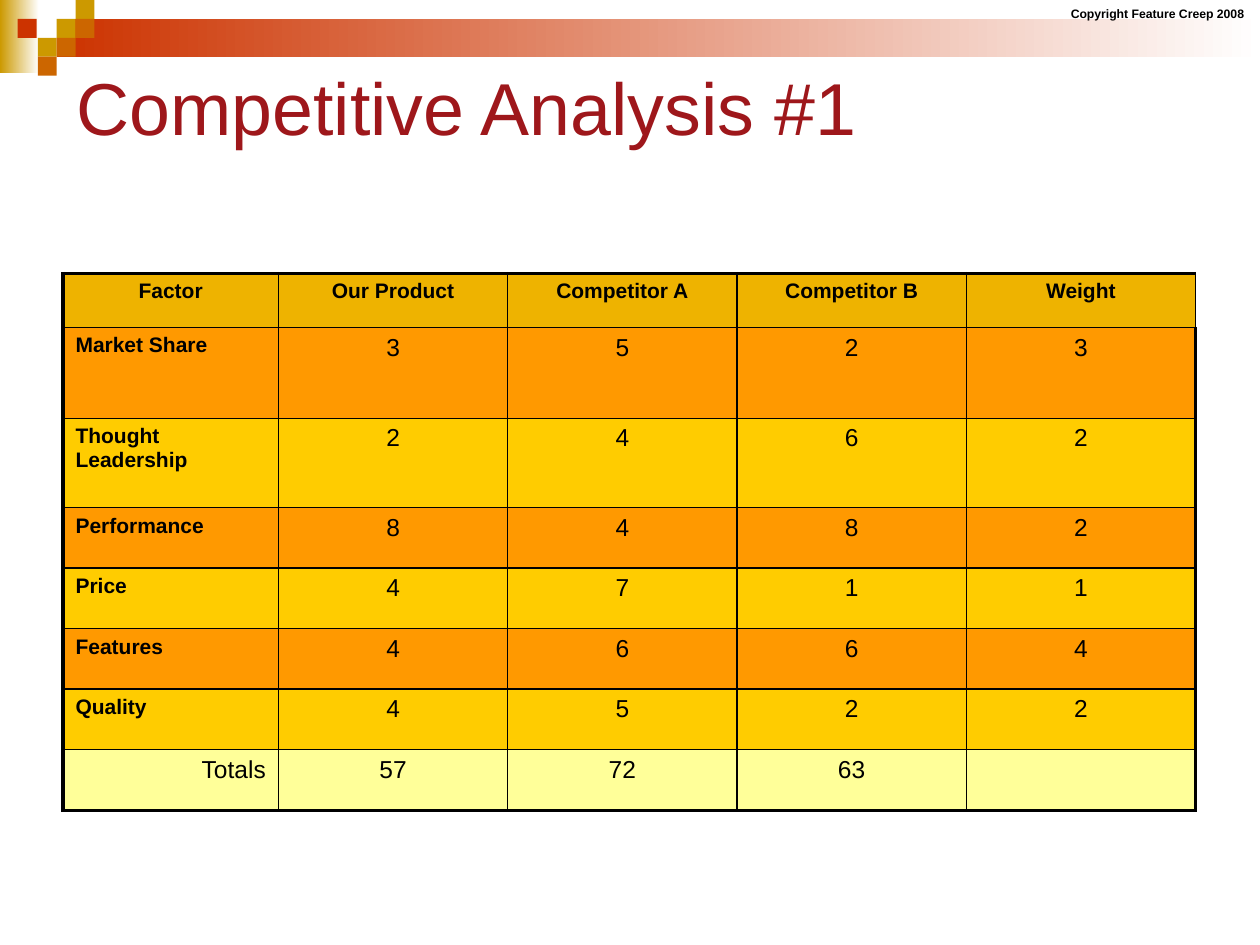
"""Build the competitive analysis slide with its scored comparison table."""
from lxml import etree
from pptx import Presentation
from pptx.dml.color import RGBColor
from pptx.enum import shapes, text
from pptx.oxml import ns
from pptx.util import Inches, Pt

FONT = "Arial"
BLACK = RGBColor(0x00, 0x00, 0x00)
WHITE = RGBColor(0xFF, 0xFF, 0xFF)
CRIMSON = RGBColor(0x9E, 0x17, 0x1B)
GOLD = RGBColor(0xCC, 0x99, 0x00)
RED = RGBColor(0xCC, 0x33, 0x00)
BROWN = RGBColor(0xCC, 0x66, 0x00)
HEADER_FILL = RGBColor(0xEE, 0xB3, 0x00)
ORANGE = RGBColor(0xFF, 0x99, 0x00)
YELLOW = RGBColor(0xFF, 0xCC, 0x00)
TOTAL_FILL = RGBColor(0xFF, 0xFF, 0x99)

TILE = 0.15
TILES = [
    (0.45, 0.15, GOLD), (0.6, 0, GOLD), (0.6, 0.15, BROWN), (0.3, 0.3, GOLD),
    (0.14, 0.15, RED), (0.45, 0.3, BROWN), (0.3, 0.45, BROWN),
]
SCORES = [
    ("Factor", "Our Product", "Competitor A", "Competitor B", "Weight"),
    ("Market Share", "3", "5", "2", "3"),
    ("Thought Leadership", "2", "4", "6", "2"),
    ("Performance", "8", "4", "8", "2"),
    ("Price", "4", "7", "1", "1"),
    ("Features", "4", "6", "6", "4"),
    ("Quality", "4", "5", "2", "2"),
    ("Totals", "57", "72", "63", ""),
]
COLUMN_WIDTHS = [1.71] + [1.82] * 4
ROW_HEIGHTS = [0.43, 0.72, 0.71] + [0.48] * 5


def add_block(slide, left, top, width, height, color, fade=False):
    """Add a borderless rectangle, solid or fading to white on the right."""
    block = slide.shapes.add_shape(
        shapes.MSO_SHAPE.RECTANGLE,
        Inches(left), Inches(top), Inches(width), Inches(height))
    block.shadow.inherit = False
    block.line.fill.background()
    if fade:
        block.fill.gradient()
        block.fill.gradient_angle = 0
        for stop, shade in zip(block.fill.gradient_stops, (color, WHITE)):
            stop.color.rgb = shade
    else:
        block.fill.solid()
        block.fill.fore_color.rgb = color


def write(paragraph, wording, size, color=BLACK, bold=False):
    """Add one styled run to a paragraph."""
    run = paragraph.add_run()
    run.text = wording
    run.font.name = FONT
    run.font.size = Pt(size)
    run.font.bold = bold
    run.font.color.rgb = color


def add_label(slide, left, top, width, height, wording, size, wrap=True, **style):
    """Add a vertically centred text box holding one line."""
    box = slide.shapes.add_textbox(
        Inches(left), Inches(top), Inches(width), Inches(height))
    box.text_frame.word_wrap = wrap
    box.text_frame.vertical_anchor = text.MSO_ANCHOR.MIDDLE
    write(box.text_frame.paragraphs[0], wording, size, **style)


def set_border(cell, side, points):
    """Draw a black line on one side (L, R, T or B) of a cell."""
    edge = etree.SubElement(
        cell._tc.get_or_add_tcPr(), ns.qn(f"a:ln{side}"), w=str(Pt(points)))
    fill = etree.SubElement(edge, ns.qn("a:solidFill"))
    etree.SubElement(fill, ns.qn("a:srgbClr"), val=str(BLACK))


def style_cell(cell, row, column, wording):
    """Give a cell its borders, fill and text according to its position."""
    header, total = row == 0, row == len(SCORES) - 1
    last_column = column == len(COLUMN_WIDTHS) - 1
    thick = {"L": column == 0, "R": last_column and not header,
             "T": header, "B": total}
    for side, is_thick in thick.items():
        set_border(cell, side, 2 if is_thick else 1)

    cell.fill.solid()
    if header:
        cell.fill.fore_color.rgb = HEADER_FILL
    elif total:
        cell.fill.fore_color.rgb = TOTAL_FILL
    else:
        cell.fill.fore_color.rgb = ORANGE if row % 2 else YELLOW

    paragraph = cell.text_frame.paragraphs[0]
    if header or column:
        paragraph.alignment = text.PP_ALIGN.CENTER
    else:
        paragraph.alignment = text.PP_ALIGN.RIGHT if total else text.PP_ALIGN.LEFT
    heading = header or (column == 0 and not total)
    if wording:
        write(paragraph, wording, 12 if heading else 14, bold=heading)


def add_score_table(slide):
    """Add the table of factors, scores, weights and totals."""
    table = slide.shapes.add_table(
        len(SCORES), len(COLUMN_WIDTHS), Inches(0.5), Inches(2.17),
        Inches(sum(COLUMN_WIDTHS)), Inches(sum(ROW_HEIGHTS))).table
    table.first_row = table.horz_banding = False
    for column, width in zip(table.columns, COLUMN_WIDTHS):
        column.width = Inches(width)
    for row, height in zip(table.rows, ROW_HEIGHTS):
        row.height = Inches(height)
    for row, factor in enumerate(SCORES):
        for column, wording in enumerate(factor):
            style_cell(table.cell(row, column), row, column, wording)


def main():
    """Assemble and save the slide."""
    deck = Presentation()
    deck.slide_width, deck.slide_height = Inches(10), Inches(7.5)
    slide = deck.slides.add_slide(deck.slide_layouts[6])
    add_block(slide, 0, 0, 0.31, 0.58, GOLD, fade=True)
    add_block(slide, 0.45, 0.15, 9.55, 0.3, RED, fade=True)
    for left, top, color in TILES:
        add_block(slide, left, top, TILE, TILE, color)
    add_label(slide, 8.4, 0, 1.6, 0.22, "Copyright Feature Creep 2008", 7,
              wrap=False, bold=True)
    add_label(slide, 0.51, 0.42, 9, 0.84, "Competitive Analysis #1", 42,
              color=CRIMSON)
    add_score_table(slide)
    deck.save("out.pptx")


if __name__ == "__main__":
    main()
